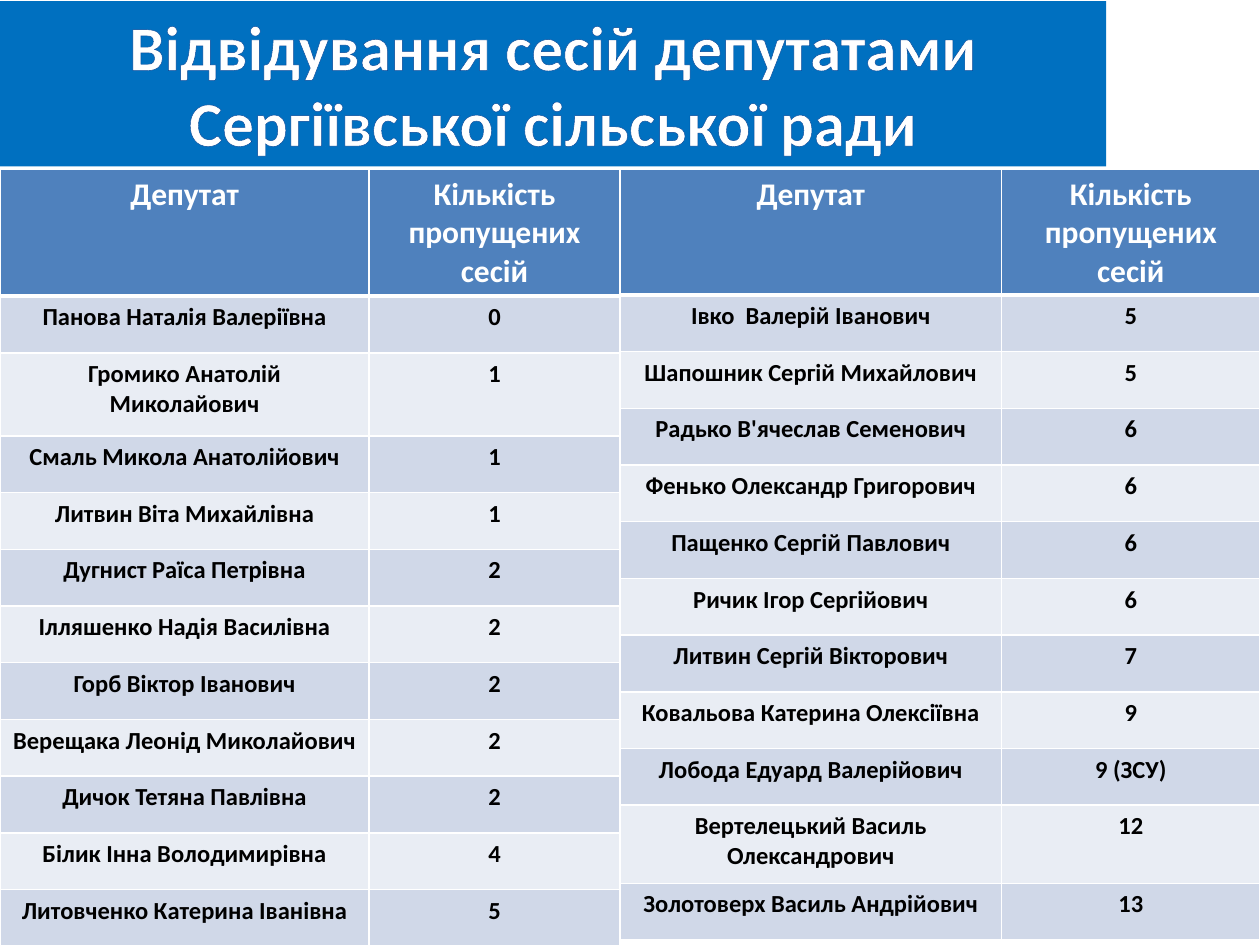
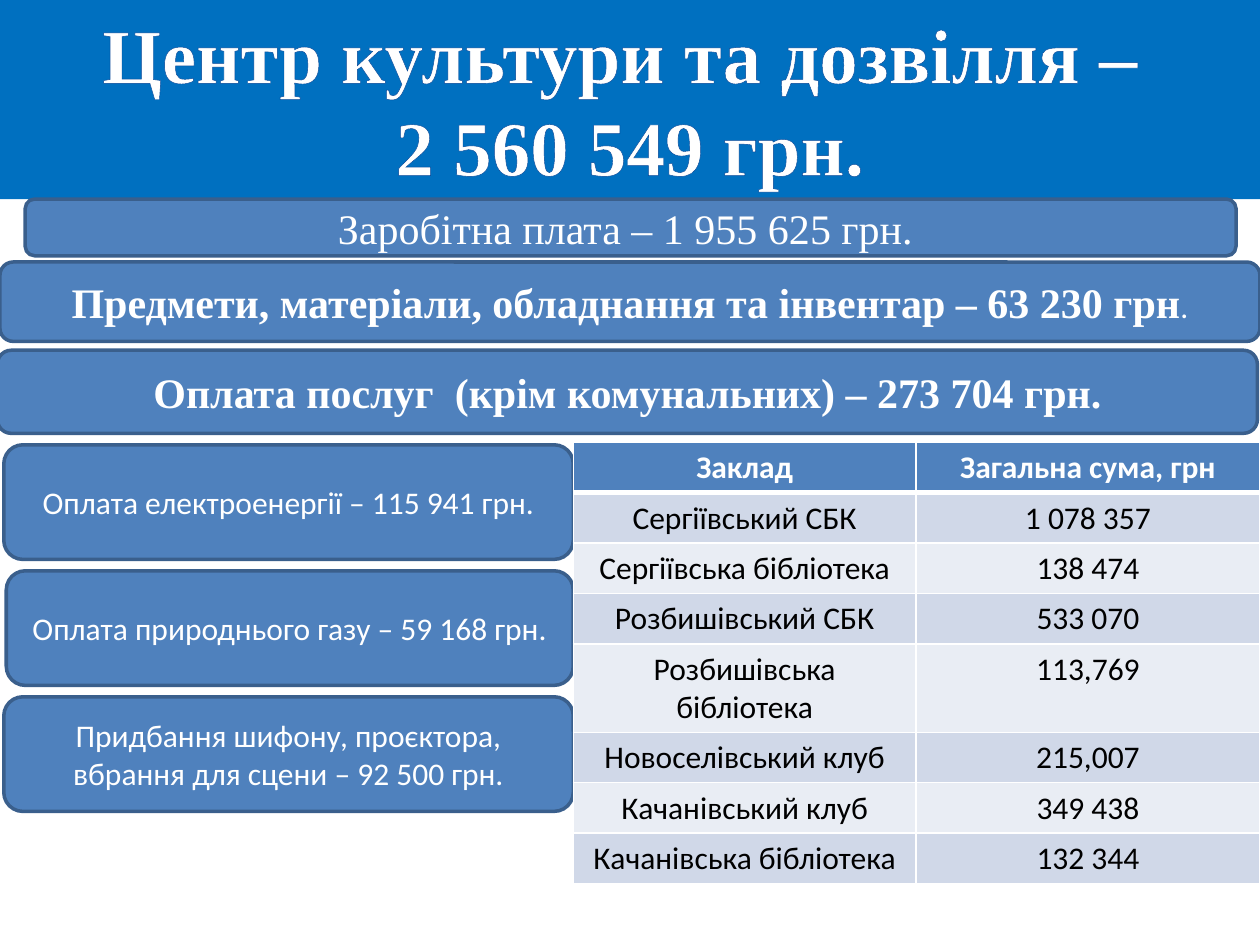
from dataclasses import dataclass
from lxml import etree
from pptx import Presentation
from pptx.dml.color import RGBColor as RGB
from pptx.enum.shapes import MSO_SHAPE as SHAPE
from pptx.enum.text import MSO_ANCHOR as ANCHOR, MSO_AUTO_SIZE as AUTO, PP_ALIGN as ALIGN
from pptx.oxml.ns import qn
from pptx.util import Pt

PX = 9144  # 100 px to the inch


@dataclass(frozen=True)
class Theme:
    title_fill: str = "0070C0"
    title_outline: str = "054697"
    accent: str = "4F81BD"
    accent_line: str = "3A5F8C"
    bands: tuple = ("D0D8E8", "E9EDF4")
    white: str = "FFFFFF"
    black: str = "000000"
    sans: str = "Calibri"
    serif: str = "Times New Roman"
    bar_size: int = 24
    text_size: int = 18
    name_size: int = 14


T = Theme()


def write(tf, text, font, size, bold=False, color=T.white):
    """Fill a text frame with centred text in one style."""
    tf.text = text
    tf.word_wrap = True
    for p in tf.paragraphs:
        p.alignment = ALIGN.CENTER
        for r in p.runs:
            r.font.name, r.font.size, r.font.bold = font, Pt(size), bold
            r.font.color.rgb = RGB.from_string(color)


def add_grid(s, left, top, widths, heights, rows, size, bold):
    """Add a table with an accent header, banded rows and white borders."""
    frame = s.shapes.add_table(len(rows), len(widths), left * PX, top * PX,
                               sum(widths) * PX, sum(heights) * PX)
    table = frame.table
    for column, width in zip(table.columns, widths):
        column.width = width * PX
    for i, (row, height) in enumerate(zip(rows, heights)):
        table.rows[i].height = height * PX
        for j, text in enumerate(row):
            cell = table.cell(i, j)
            header = i == 0
            if header:
                write(cell.text_frame, text, T.sans, T.text_size, True)
            else:
                write(cell.text_frame, text, T.sans, size, bold, T.black)
            cell.fill.solid()
            fill = T.accent if header else T.bands[(i - 1) % 2]
            cell.fill.fore_color.rgb = RGB.from_string(fill)
            edges = {"L": 1, "R": 1, "T": 3 if i == 1 else 1, "B": 3 if header else 1}
            tc_pr = cell._tc.get_or_add_tcPr()
            for k, (side, width) in enumerate(edges.items()):
                ln = etree.Element(qn(f"a:ln{side}"), w=str(Pt(width)))
                solid = etree.SubElement(ln, qn("a:solidFill"))
                etree.SubElement(solid, qn("a:srgbClr"), val=T.white)
                tc_pr.insert(k, ln)


prs = Presentation()
prs.slide_width, prs.slide_height = 1000 * PX, 750 * PX

# Slides with their title bands
titles = [
    ("Відвідування сесій депутатами Сергіївської сільської ради", T.sans, 36, (0, 1, 878, 131)),
    ("Центр культури та дозвілля – \n2 560 549 грн.", T.serif, 44, (0, 0, 1000, 158)),
]
for text, font, size, box in titles:
    s = prs.slides.add_slide(prs.slide_layouts[5])
    sp = s.shapes.title
    sp.left, sp.top, sp.width, sp.height = (v * PX for v in box)
    sp.fill.solid()
    sp.fill.fore_color.rgb = RGB.from_string(T.title_fill)
    tf = sp.text_frame
    write(tf, text, font, size, True)
    tf.vertical_anchor = ANCHOR.TOP
    tf.auto_size = AUTO.SHAPE_TO_FIT_TEXT
    for p in tf.paragraphs:
        for r in p.runs:
            ln = etree.Element(qn("a:ln"), w=str(Pt(1)))
            solid = etree.SubElement(ln, qn("a:solidFill"))
            etree.SubElement(solid, qn("a:srgbClr"), val=T.title_outline)
            r.font._element.insert(0, ln)

attendance, culture = prs.slides

# Slide 1: missed sessions by deputy
deputy_header = ("Депутат", "Кількість пропущених сесій")
deputies_left = [
    deputy_header,
    ("Панова Наталія Валеріївна", "0"),
    ("Громико Анатолій Миколайович", "1"),
    ("Смаль Микола Анатолійович", "1"),
    ("Литвин Віта Михайлівна", "1"),
    ("Дугнист Раїса Петрівна", "2"),
    ("Ілляшенко Надія Василівна", "2"),
    ("Горб Віктор Іванович", "2"),
    ("Верещака Леонід Миколайович", "2"),
    ("Дичок Тетяна Павлівна", "2"),
    ("Білик Інна Володимирівна", "4"),
    ("Литовченко Катерина Іванівна", "5"),
]
deputies_right = [
    deputy_header,
    ("Івко  Валерій Іванович", "5"),
    ("Шапошник Сергій Михайлович", "5"),
    ("Радько В'ячеслав Семенович", "6"),
    ("Фенько Олександр Григорович", "6"),
    ("Пащенко Сергій Павлович", "6"),
    ("Ричик Ігор Сергійович", "6"),
    ("Литвин Сергій Вікторович", "7"),
    ("Ковальова Катерина Олексіївна", "9"),
    ("Лобода Едуард Валерійович", "9 (ЗСУ)"),
    ("Вертелецький Василь Олександрович", "12"),
    ("Золотоверх Василь Андрійович", "13"),
]
add_grid(attendance, 0, 134, (293, 199), [101, 45, 66] + [45] * 9,
         deputies_left, T.name_size, True)
add_grid(attendance, 492, 134, (303, 205), [99] + [45] * 9 + [62, 45],
         deputies_right, T.name_size, True)

# Slide 2: spending bars and the sums by institution
bars = [
    ("Заробітна плата – 1 955 625 грн. ", T.serif, T.bar_size, False, (20, 158, 961, 45)),
    ("Предмети, матеріали, обладнання та інвентар – 63 230 грн", T.serif, T.bar_size, True,
     (0, 208, 1000, 63)),
    ("Оплата послуг  (крім комунальних) – 273 704 грн.", T.serif, T.bar_size, True,
     (-2, 278, 1000, 66)),
    ("Оплата електроенергії – 115 941 грн.", T.sans, T.text_size, False, (3, 353, 452, 91)),
    ("Оплата природнього газу – 59 168 грн.", T.sans, T.text_size, False, (5, 453, 450, 91)),
    ("Придбання шифону, проєктора, вбрання для сцени – 92 500 грн.", T.sans, T.text_size, False,
     (3, 553, 452, 91)),
]
for text, font, size, bold, box in bars:
    sp = culture.shapes.add_shape(SHAPE.ROUNDED_RECTANGLE, *(v * PX for v in box))
    sp.shadow.inherit = False
    sp.fill.solid()
    sp.fill.fore_color.rgb = RGB.from_string(T.accent)
    sp.line.color.rgb = RGB.from_string(T.accent_line)
    sp.line.width = Pt(2)
    tf = sp.text_frame
    tf.vertical_anchor = ANCHOR.MIDDLE
    write(tf, text, font, size, bold)
    if not text.rstrip().endswith("."):
        r = tf.paragraphs[0].add_run()
        r.text = "."
        r.font.name, r.font.size, r.font.bold = T.sans, Pt(T.text_size), False
        r.font.color.rgb = RGB.from_string(T.white)

institutions = [
    ("Заклад", "Загальна сума, грн"),
    ("Сергіївський СБК", "1 078 357"),
    ("Сергіївська бібліотека", "138 474"),
    ("Розбишівський СБК", "533 070"),
    ("Розбишівська бібліотека", "113,769"),
    ("Новоселівський клуб", "215,007"),
    ("Качанівський клуб", "349 438"),
    ("Качанівська бібліотека", "132 344"),
]
add_grid(culture, 455, 351, (272, 273), [40] * 4 + [70] + [40] * 3,
         institutions, T.text_size, False)

prs.save("out.pptx")
